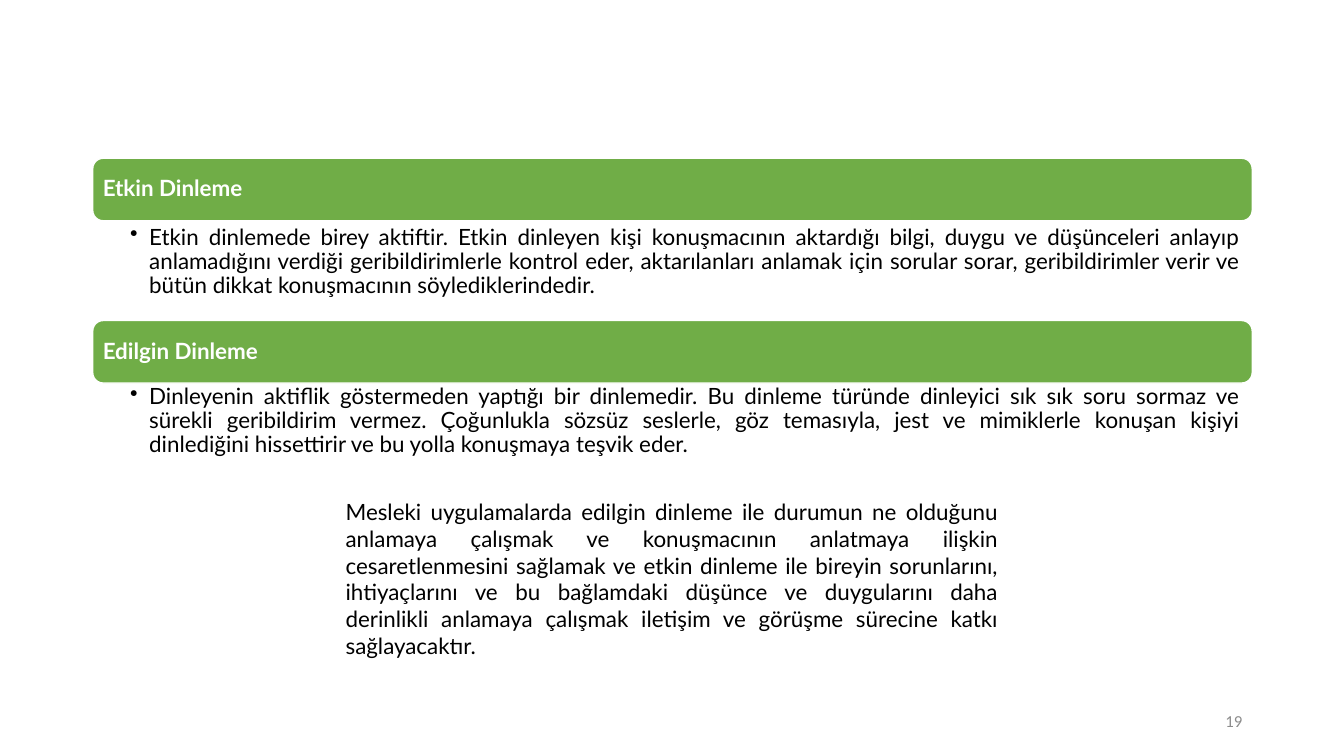
from lxml import etree
from pptx import Presentation
from pptx.dml.color import RGBColor
from pptx.enum.shapes import MSO_SHAPE
from pptx.enum.text import MSO_ANCHOR, PP_ALIGN
from pptx.oxml.ns import qn
from pptx.util import Inches, Pt

ROUNDED = MSO_SHAPE.ROUNDED_RECTANGLE
TOP, MIDDLE = MSO_ANCHOR.TOP, MSO_ANCHOR.MIDDLE
LEFT, RIGHT, JUSTIFY = PP_ALIGN.LEFT, PP_ALIGN.RIGHT, PP_ALIGN.JUSTIFY
GREEN = RGBColor(0x70, 0xAD, 0x47)
WHITE = RGBColor(0xFF, 0xFF, 0xFF)
BLACK = RGBColor(0x00, 0x00, 0x00)
GREY = RGBColor(0x8C, 0x8C, 0x8C)

BAND_LEFT, BAND_WIDTH = 0.92, 11.5

# heading, heading top, body top, body
SECTIONS = [
    ("Etkin Dinleme", 1.57, 2.22,
     "Etkin dinlemede birey aktiftir. Etkin dinleyen kişi konuşmacının aktardığı "
     "bilgi, duygu ve düşünceleri anlayıp anlamadığını verdiği geribildirimlerle "
     "kontrol eder, aktarılanları anlamak için sorular sorar, geribildirimler verir "
     "ve bütün dikkat konuşmacının söylediklerindedir."),
    ("Edilgin Dinleme", 3.18, 3.8,
     "Dinleyenin aktiflik göstermeden yaptığı bir dinlemedir. Bu dinleme türünde "
     "dinleyici sık sık soru sormaz ve sürekli geribildirim vermez. Çoğunlukla "
     "sözsüz seslerle, göz temasıyla, jest ve mimiklerle konuşan kişiyi dinlediğini "
     "hissettirir ve bu yolla konuşmaya teşvik eder."),
]
SUMMARY = (
    "Mesleki uygulamalarda edilgin dinleme ile durumun ne olduğunu anlamaya çalışmak "
    "ve konuşmacının anlatmaya ilişkin cesaretlenmesini sağlamak ve etkin dinleme ile "
    "bireyin sorunlarını, ihtiyaçlarını ve bu bağlamdaki düşünce ve duygularını daha "
    "derinlikli anlamaya çalışmak iletişim ve görüşme sürecine katkı sağlayacaktır.")


def write_text(shape, text, color, alignment, anchor=TOP, size=16, font="Lato",
               insets=(0.1, 0.05, 0.1, 0.05)):
    frame = shape.text_frame
    frame.word_wrap = True
    frame.vertical_anchor = anchor
    (frame.margin_left, frame.margin_top,
     frame.margin_right, frame.margin_bottom) = map(Inches, insets)
    paragraph = frame.paragraphs[0]
    paragraph.text = text
    paragraph.alignment = alignment
    paragraph.font.size = Pt(size)
    paragraph.font.name = font
    paragraph.font.color.rgb = color
    return paragraph


def add_bullet(paragraph, indent):
    properties = paragraph._p.get_or_add_pPr()
    properties.set("marL", str(Inches(indent)))
    properties.set("indent", str(-Inches(indent)))
    bullet = etree.Element(qn("a:buChar"), char="•")
    # The bullet goes before the default run properties
    properties.insert(0, bullet)


presentation = Presentation()
presentation.slide_width = Inches(13.33)
presentation.slide_height = Inches(7.5)
slide = presentation.slides.add_slide(presentation.slide_layouts[6])

# Green headings, each with a bulleted explanation
for heading, heading_top, body_top, body in SECTIONS:
    band = slide.shapes.add_shape(ROUNDED, Inches(BAND_LEFT), Inches(heading_top),
                                  Inches(BAND_WIDTH), Inches(0.62))
    band.shadow.inherit = False
    band.fill.solid()
    band.fill.fore_color.rgb = GREEN
    band.line.color.rgb = WHITE
    band.line.width = Pt(1)
    paragraph = write_text(band, heading, WHITE, LEFT, MIDDLE,
                           insets=(0.07, 0.07, 0.07, 0.07))
    paragraph.font.bold = True
    paragraph.line_spacing = 0.9

    body_box = slide.shapes.add_textbox(Inches(BAND_LEFT), Inches(body_top),
                                        Inches(BAND_WIDTH), Inches(0.96))
    paragraph = write_text(body_box, body, BLACK, JUSTIFY,
                           insets=(0.37, 0.02, 0.12, 0.02))
    add_bullet(paragraph, 0.19)
    paragraph.line_spacing = 0.9

# Closing summary
summary_box = slide.shapes.add_textbox(Inches(3.33), Inches(4.89),
                                       Inches(6.67), Inches(1.72))
write_text(summary_box, SUMMARY, BLACK, JUSTIFY)

# Slide number
number_box = slide.shapes.add_textbox(Inches(9.42), Inches(6.95), Inches(3), Inches(0.4))
write_text(number_box, "19", GREY, RIGHT, MIDDLE, size=12, font="Calibri")

presentation.save("out.pptx")
